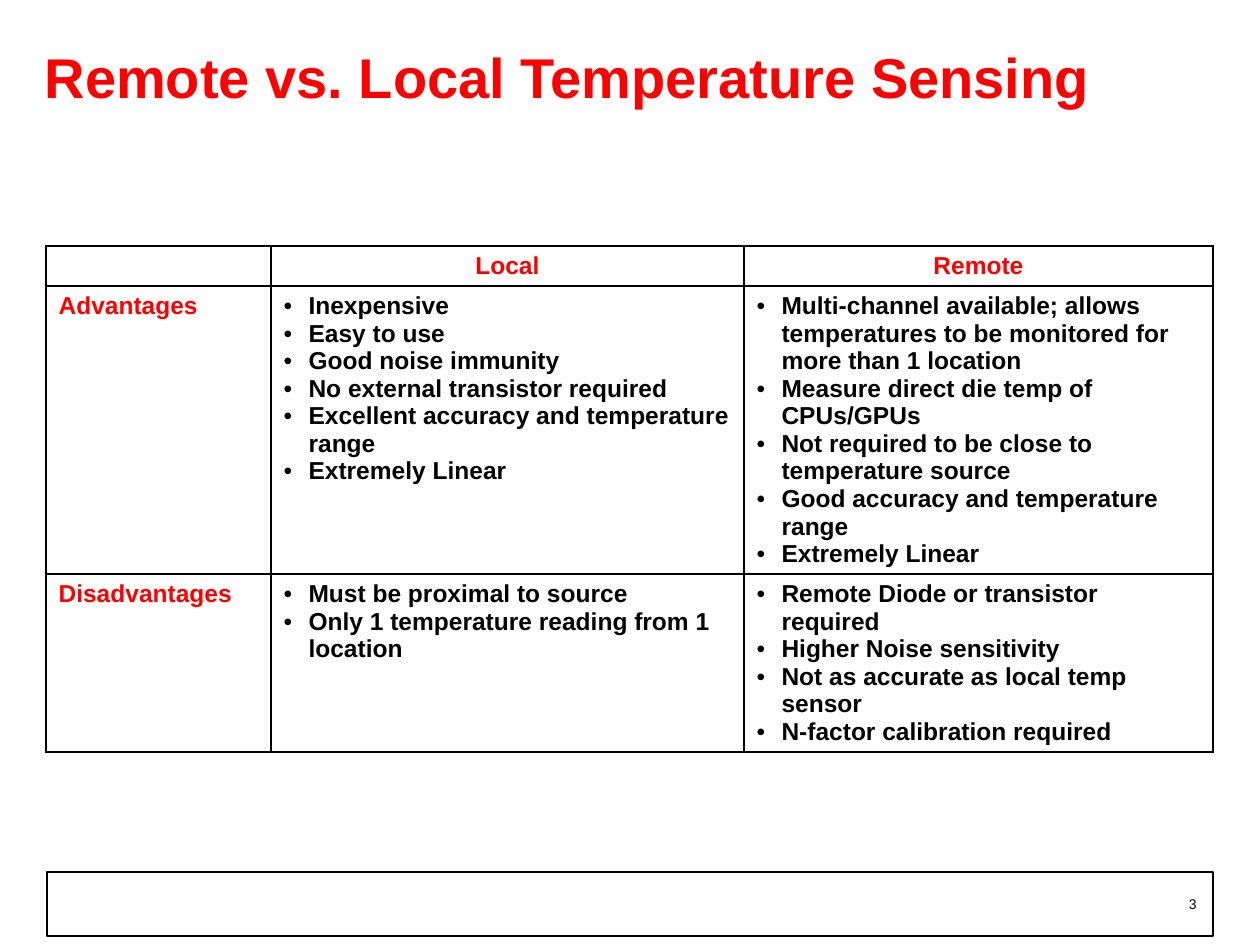
from dataclasses import dataclass

from lxml.etree import SubElement
from pptx import Presentation
from pptx.dml.color import RGBColor
from pptx.enum.shapes import MSO_SHAPE
from pptx.enum.text import MSO_ANCHOR, MSO_AUTO_SIZE, PP_ALIGN
from pptx.oxml.ns import qn
from pptx.util import Pt

EMU_PER_PX = 914400 / 126


def px(length):
    return round(length * EMU_PER_PX)


@dataclass(frozen=True)
class Theme:
    font: str = "Arial"
    accent: RGBColor = RGBColor(0xFF, 0x00, 0x00)
    ink: RGBColor = RGBColor(0x00, 0x00, 0x00)
    title_size: int = 32
    table_size: int = 14
    number_size: int = 8
    frame_width: float = 0.75
    border_width: float = 1


class SlideBuilder:
    def __init__(self, slide, theme):
        self.slide = slide
        self.theme = theme

    def style(self, paragraph, size, color, bold=True, align=PP_ALIGN.LEFT):
        paragraph.alignment = align
        font = paragraph.font
        font.name, font.size, font.bold = self.theme.font, Pt(size), bold
        font.color.rgb = color

    def place(self, shape, left, top, width, height):
        shape.left, shape.top = px(left), px(top)
        shape.width, shape.height = px(width), px(height)

    def title(self, text, *box):
        heading = self.slide.shapes.title
        self.place(heading, *box)
        frame = heading.text_frame
        frame.text = text
        frame.auto_size = MSO_AUTO_SIZE.NONE
        frame.vertical_anchor = MSO_ANCHOR.MIDDLE
        self.style(frame.paragraphs[0], self.theme.title_size, self.theme.accent)

    def footer_frame(self, *box):
        frame = self.slide.shapes.add_shape(MSO_SHAPE.RECTANGLE, *map(px, box))
        frame.shadow.inherit = False
        frame.fill.background()
        frame.line.color.rgb = self.theme.ink
        frame.line.width = Pt(self.theme.frame_width)

    def page_number(self, text, *box):
        frame = self.slide.shapes.add_textbox(*map(px, box)).text_frame
        frame.word_wrap = True
        frame.vertical_anchor = MSO_ANCHOR.MIDDLE
        frame.text = text
        self.style(frame.paragraphs[0], self.theme.number_size, self.theme.ink,
                   bold=False, align=PP_ALIGN.RIGHT)

    def table(self, rows, left, top, widths, heights):
        """Strings become red labels (centred in the first row), lists become bullets."""
        table = self.slide.shapes.add_table(
            len(rows), len(widths), px(left), px(top),
            px(sum(widths)), px(sum(heights))).table
        table.first_row = table.horz_banding = False
        for column, width in zip(table.columns, widths):
            column.width = px(width)
        for row, height in zip(table.rows, heights):
            row.height = px(height)
        for r, contents in enumerate(rows):
            for c, content in enumerate(contents):
                cell = table.cell(r, c)
                self.border(cell)
                cell.fill.background()
                if isinstance(content, list):
                    self.bullets(cell, content)
                else:
                    cell.text = content
                    self.style(cell.text_frame.paragraphs[0],
                               self.theme.table_size, self.theme.accent,
                               align=PP_ALIGN.LEFT if r else PP_ALIGN.CENTER)

    def bullets(self, cell, items):
        cell.text = "\n".join(items)
        for paragraph in cell.text_frame.paragraphs:
            properties = paragraph._p.get_or_add_pPr()
            properties.set("marL", str(px(25)))
            properties.set("indent", str(-px(25)))
            SubElement(properties, qn("a:buFont"), typeface=self.theme.font)
            SubElement(properties, qn("a:buChar"), char="•")
            self.style(paragraph, self.theme.table_size, self.theme.ink)

    def border(self, cell):
        properties = cell._tc.get_or_add_tcPr()
        for side in ("lnL", "lnR", "lnT", "lnB"):
            line = SubElement(properties, qn(f"a:{side}"),
                              w=str(Pt(self.theme.border_width)))
            fill = SubElement(line, qn("a:solidFill"))
            SubElement(fill, qn("a:srgbClr"), val=str(self.theme.ink))


COMPARISON = [
    ["", "Local", "Remote"],
    ["Advantages",
     ["Inexpensive",
      "Easy to use",
      "Good noise immunity",
      "No external transistor required",
      "Excellent accuracy and temperature range",
      "Extremely Linear"],
     ["Multi-channel available; allows temperatures to be monitored "
      "for more than 1 location",
      "Measure direct die temp of CPUs/GPUs",
      "Not required to be close to temperature source",
      "Good accuracy and temperature range",
      "Extremely Linear"]],
    ["Disadvantages",
     ["Must be proximal to source",
      "Only 1 temperature reading from 1 location"],
     ["Remote Diode or transistor required",
      "Higher Noise sensitivity",
      "Not as accurate as local temp sensor",
      "N-factor calibration required"]],
]


def main():
    presentation = Presentation()
    presentation.slide_width, presentation.slide_height = px(1260), px(945)
    title_only = presentation.slide_layouts[5]
    builder = SlideBuilder(presentation.slides.add_slide(title_only), Theme())

    builder.footer_frame(47, 872, 1166, 64)
    builder.title("Remote vs. Local Temperature Sensing", 32, 20, 1166, 112)
    builder.table(COMPARISON, left=46, top=246,
                  widths=[225, 473, 469], heights=[40, 288, 178])
    builder.page_number("3", 1142, 874, 67, 59)
    presentation.save("out.pptx")


if __name__ == "__main__":
    main()
